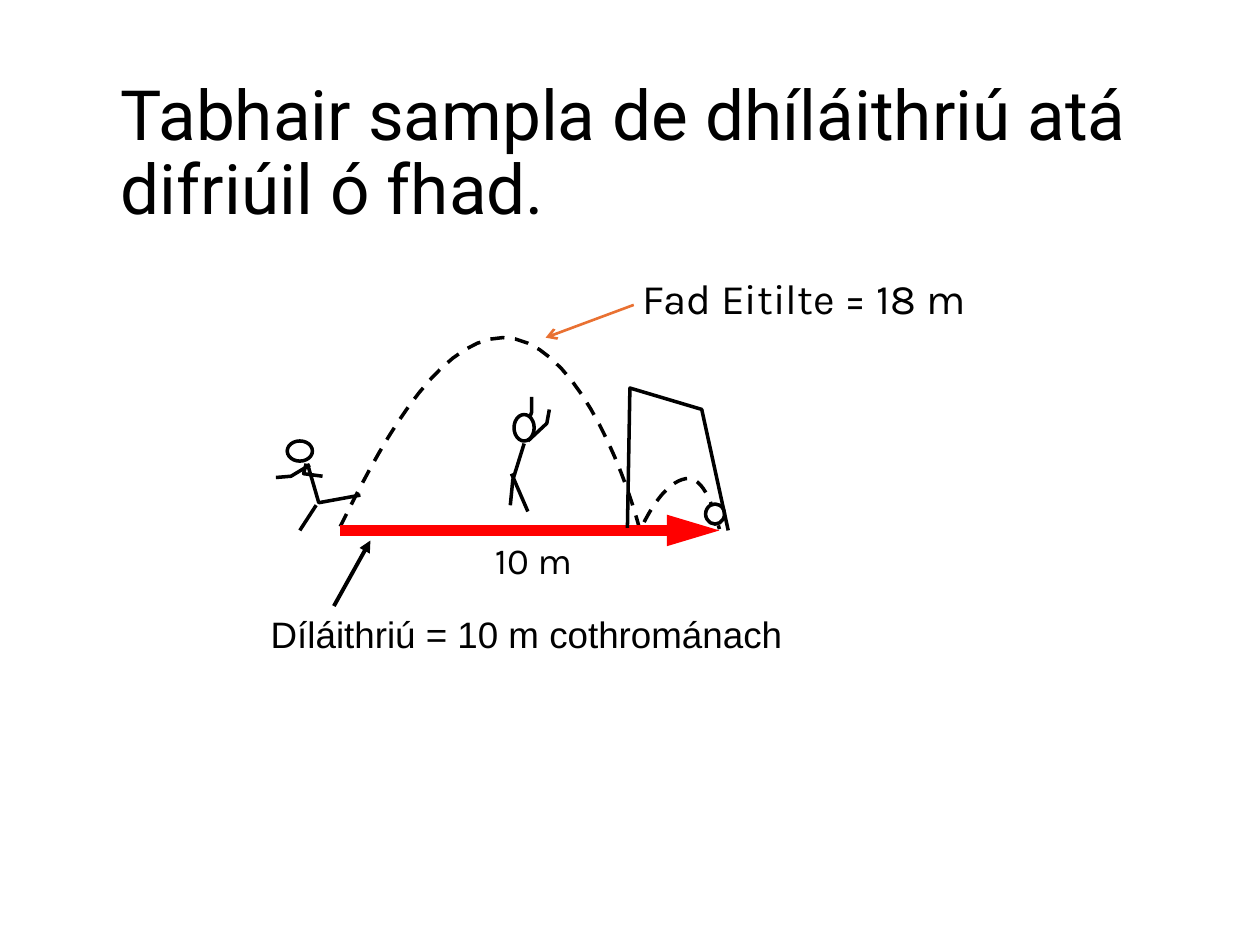
from lxml import etree
from pptx import Presentation
from pptx.dml.color import RGBColor
from pptx.enum.dml import MSO_LINE
from pptx.enum.shapes import MSO_CONNECTOR, MSO_SHAPE
from pptx.enum.text import MSO_ANCHOR, MSO_AUTO_SIZE, PP_ALIGN
from pptx.oxml.ns import qn
from pptx.util import Inches, Pt

BLACK = RGBColor(0x00, 0x00, 0x00)
WHITE = RGBColor(0xFF, 0xFF, 0xFF)
RED = RGBColor(0xFF, 0x00, 0x00)
ORANGE = RGBColor(0xE9, 0x71, 0x32)
STRAIGHT = MSO_CONNECTOR.STRAIGHT
ELLIPSE = MSO_SHAPE.OVAL
DASH = MSO_LINE.DASH
MIDDLE = MSO_ANCHOR.MIDDLE
LEFT = PP_ALIGN.LEFT
FIXED = MSO_AUTO_SIZE.NONE
GROW = MSO_AUTO_SIZE.SHAPE_TO_FIT_TEXT
TITLE_ONLY = 5
CURVE_STEPS = 16

FLIGHT_START = (2.7, 4.18)
FLIGHT_CURVES = [
    [(2.97, 3.64), (3.44, 2.69), (3.99, 2.68)],
    [(4.54, 2.68), (4.94, 3.68), (5.08, 4.21)],
    [(5.15, 4.06), (5.28, 3.83), (5.44, 3.8)],
    [(5.59, 3.77), (5.67, 4.06), (5.71, 4.2)],
]
KICKER_LIMBS = [
    [(2.44, 3.68), (2.53, 3.99), (2.86, 3.93)],
    [(2.51, 4.01), (2.38, 4.21)],
    [(2.43, 3.68), (2.41, 3.76), (2.56, 3.78)],
    [(2.46, 3.69), (2.31, 3.78), (2.19, 3.79)],
]
DEFENDER_LIMBS = [
    [(4.16, 3.52), (4.07, 3.81), (4.05, 4.01)],
    [(4.06, 3.76), (4.19, 4.06)],
    [(4.19, 3.5), (4.34, 3.36), (4.36, 3.25)],
    [(4.15, 3.47), (4.22, 3.27), (4.22, 3.15)],
]
GOAL = [(4.98, 4.19), (5, 3.08), (5.57, 3.25), (5.78, 4.21)]


def style_text(frame, text, font, size):
    frame.word_wrap = True
    frame.text = text
    para = frame.paragraphs[0]
    para.alignment = LEFT
    para.font.name = font
    para.font.size = Pt(size)
    para.font.color.rgb = BLACK
    return para


def set_title(slide, text):
    title = slide.shapes.title
    title.left, title.top = Inches(0.86), Inches(0.78)
    title.width, title.height = Inches(8.55), Inches(0.9)
    para = style_text(title.text_frame, text, "Roboto", 39.6)
    para.line_spacing = 0.9
    title.text_frame.vertical_anchor = MIDDLE
    title.text_frame.auto_size = FIXED


def add_label(slide, text, bounds, font, size):
    box = slide.shapes.add_textbox(*map(Inches, bounds))
    style_text(box.text_frame, text, font, size)
    box.text_frame.auto_size = GROW


def add_arrow(slide, start, end, color, width, head, length="med"):
    arrow = slide.shapes.add_connector(STRAIGHT, *map(Inches, start + end))
    arrow.line.color.rgb = color
    arrow.line.width = Pt(width)
    line = arrow.line._get_or_add_ln()
    etree.SubElement(line, qn("a:tailEnd"), type=head, w="med", len=length)
    etree.SubElement(arrow._element.spPr, qn("a:effectLst"))


def outline(shape):
    shape.shadow.inherit = False
    shape.line.color.rgb = BLACK
    shape.line.width = Pt(2)


def add_stroke(slide, points):
    corners = [(Inches(x), Inches(y)) for x, y in points]
    builder = slide.shapes.build_freeform(*corners[0])
    builder.add_line_segments(corners[1:], close=False)
    stroke = builder.convert_to_shape()
    stroke.fill.background()
    outline(stroke)
    return stroke


def add_ellipse(slide, bounds, fill=None):
    ellipse = slide.shapes.add_shape(ELLIPSE, *map(Inches, bounds))
    if fill is None:
        ellipse.fill.background()
    else:
        ellipse.fill.solid()
        ellipse.fill.fore_color.rgb = fill
    outline(ellipse)


def bezier_point(corners, t):
    weights = ((1 - t) ** 3, 3 * t * (1 - t) ** 2, 3 * t**2 * (1 - t), t**3)
    return tuple(sum(w * c for w, c in zip(weights, axis)) for axis in zip(*corners))


def trace_curves(start, curves):
    points = [start]
    for curve in curves:
        corners = [points[-1]] + curve
        points += [bezier_point(corners, step / CURVE_STEPS) for step in range(1, CURVE_STEPS + 1)]
    return points


def add_strokes(slide, strokes):
    for points in strokes:
        add_stroke(slide, points)


def main():
    deck = Presentation()
    deck.slide_width, deck.slide_height = Inches(10), Inches(7.5)
    slide = deck.slides.add_slide(deck.slide_layouts[TITLE_ONLY])

    set_title(slide, "Tabhair sampla de dhíláithriú atá difriúil ó fhad.")
    add_label(slide, "Díláithriú = 10 m cothrománach", (2.05, 4.81, 4.31, 0.45), "Arial", 21)
    add_label(slide, "Fad Eitilte = 18 m", (5, 2.11, 3.08, 0.5), "Karla", 24)
    add_arrow(slide, (5.03, 2.42), (4.33, 2.68), ORANGE, 1.5, "arrow")

    flight = add_stroke(slide, trace_curves(FLIGHT_START, FLIGHT_CURVES))
    flight.line.dash_style = DASH

    add_ellipse(slide, (2.28, 3.5, 0.2, 0.16))
    add_strokes(slide, KICKER_LIMBS)
    add_arrow(slide, (2.7, 4.21), (5.71, 4.21), RED, 6, "triangle", "lg")
    add_strokes(slide, DEFENDER_LIMBS)
    add_ellipse(slide, (4.08, 3.29, 0.16, 0.21), WHITE)
    add_ellipse(slide, (5.6, 4, 0.15, 0.16), WHITE)
    add_stroke(slide, GOAL)

    add_label(slide, "10 m", (3.83, 4.22, 0.93, 0.45), "Karla", 21)
    add_arrow(slide, (2.65, 4.81), (2.94, 4.29), BLACK, 2.25, "triangle")
    deck.save("out.pptx")


if __name__ == "__main__":
    main()
